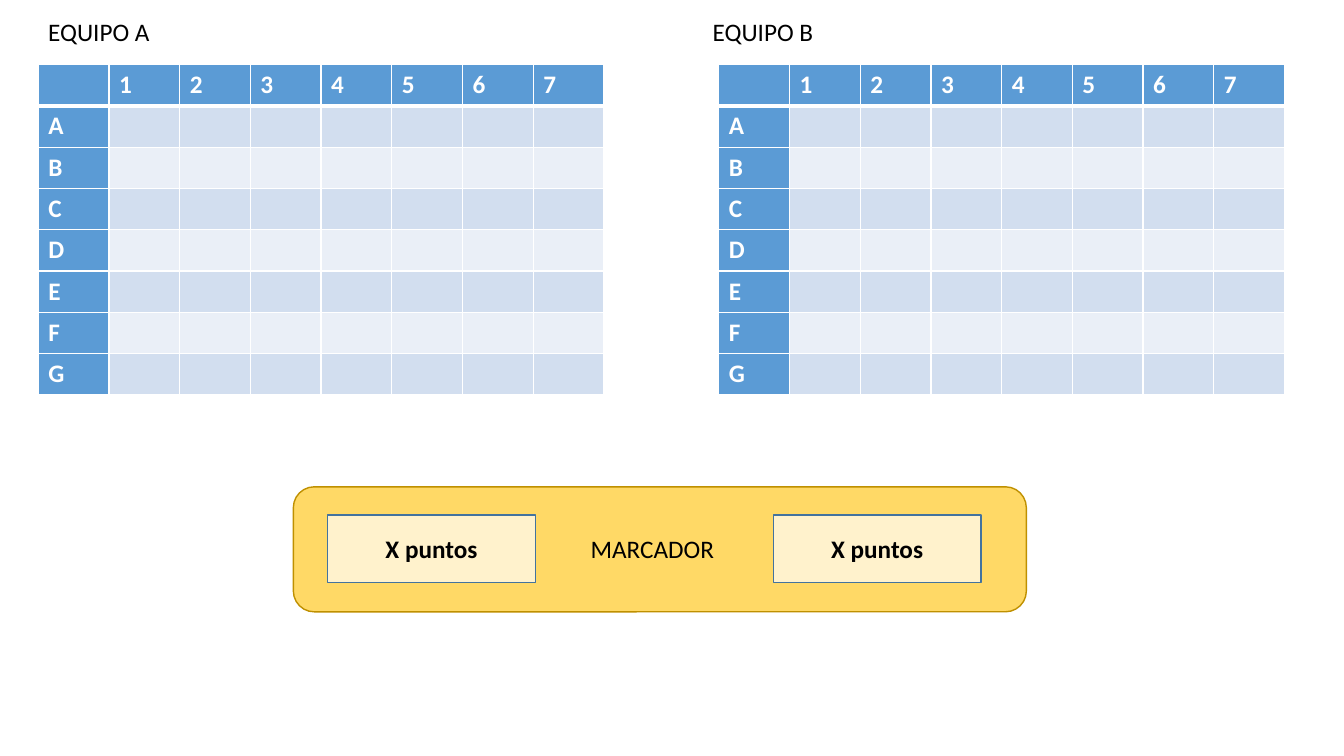
from dataclasses import dataclass

from lxml.etree import SubElement
from pptx import Presentation
from pptx.dml.color import RGBColor
from pptx.enum.shapes import MSO_SHAPE
from pptx.enum.text import MSO_ANCHOR, MSO_AUTO_SIZE, PP_ALIGN
from pptx.oxml.ns import qn
from pptx.shapes.autoshape import Shape
from pptx.slide import Slide
from pptx.table import _Cell
from pptx.text.text import TextFrame
from pptx.util import Inches, Pt

COLORS = {
    "header": "5B9BD5",
    "odd_row": "D2DEEF",
    "even_row": "EAEFF7",
    "white": "FFFFFF",
    "black": "000000",
    "scoreboard": "FFD966",
    "scoreboard_edge": "BF9000",
    "score": "FFF2CC",
    "score_edge": "43739E",
}
COLUMN_LABELS = "1234567"
ROW_LABELS = "ABCDEFG"


@dataclass(frozen=True)
class Label:
    text: str
    left: float
    top: float
    width: float


@dataclass(frozen=True)
class Team:
    label: Label
    board_left: float
    score_left: float


TEAMS = [
    Team(Label("EQUIPO A", 0.38, 0.11, 1.39), 0.38, 3.25),
    Team(Label("EQUIPO B", 6.97, 0.11, 1.39), 7.13, 7.67),
]
SCOREBOARD_LABEL = Label("MARCADOR", 5.76, 5.24, 1.57)


def color(key: str) -> RGBColor:
    return RGBColor.from_string(COLORS[key])


def write(frame: TextFrame, text: str, color_key: str, bold: bool = False) -> None:
    frame.text = text
    for run in frame.paragraphs[0].runs:
        run.font.name = "Calibri"
        run.font.size = Pt(18)
        run.font.bold = bold
        run.font.color.rgb = color(color_key)


def draw_label(slide: Slide, label: Label) -> None:
    caption = slide.shapes.add_textbox(
        Inches(label.left), Inches(label.top), Inches(label.width), Inches(0.4)
    )
    caption.text_frame.word_wrap = True
    caption.text_frame.auto_size = MSO_AUTO_SIZE.SHAPE_TO_FIT_TEXT
    write(caption.text_frame, label.text, "black")


def set_borders(cell: _Cell, bottom_width: float) -> None:
    properties = cell._tc.get_or_add_tcPr()
    for side, width in (("L", 1), ("R", 1), ("T", 1), ("B", bottom_width)):
        border = SubElement(properties, qn(f"a:ln{side}"), w=str(Pt(width)))
        fill = SubElement(border, qn("a:solidFill"))
        SubElement(fill, qn("a:srgbClr"), val=COLORS["white"])


def draw_board(slide: Slide, left: float) -> None:
    rows = ["", *ROW_LABELS]
    columns = ["", *COLUMN_LABELS]
    board = slide.shapes.add_table(
        len(rows), len(columns),
        Inches(left), Inches(0.64), Inches(5.61), Inches(3.28),
    ).table
    board.first_col = True
    for row, row_label in enumerate(rows):
        for column, column_label in enumerate(columns):
            cell = board.cell(row, column)
            is_header = row == 0 or column == 0
            set_borders(cell, 3 if row == 0 else 1)
            cell.fill.solid()
            stripe = "odd_row" if row % 2 else "even_row"
            cell.fill.fore_color.rgb = color("header" if is_header else stripe)
            if is_header:
                write(cell.text_frame, row_label or column_label, "white", True)


def draw_panel(
    slide: Slide, preset: MSO_SHAPE, left: float, top: float,
    width: float, height: float, color_key: str,
) -> Shape:
    panel = slide.shapes.add_shape(
        preset, Inches(left), Inches(top), Inches(width), Inches(height)
    )
    panel.shadow.inherit = False
    panel.fill.solid()
    panel.fill.fore_color.rgb = color(color_key)
    panel.line.color.rgb = color(f"{color_key}_edge")
    panel.line.width = Pt(1)
    return panel


def draw_score(slide: Slide, left: float) -> None:
    score = draw_panel(slide, MSO_SHAPE.RECTANGLE, left, 5.11, 2.06, 0.67, "score")
    write(score.text_frame, "X puntos", "black", True)
    score.text_frame.vertical_anchor = MSO_ANCHOR.MIDDLE
    score.text_frame.paragraphs[0].alignment = PP_ALIGN.CENTER


def main() -> None:
    presentation = Presentation()
    presentation.slide_width = Inches(13.33)
    presentation.slide_height = Inches(7.5)
    slide = presentation.slides.add_slide(presentation.slide_layouts[6])
    for team in TEAMS:
        draw_label(slide, team.label)
        draw_board(slide, team.board_left)
    draw_panel(
        slide, MSO_SHAPE.ROUNDED_RECTANGLE, 2.91, 4.83, 7.27, 1.24, "scoreboard"
    )
    for team in TEAMS:
        draw_score(slide, team.score_left)
    draw_label(slide, SCOREBOARD_LABEL)
    presentation.save("out.pptx")


if __name__ == "__main__":
    main()
